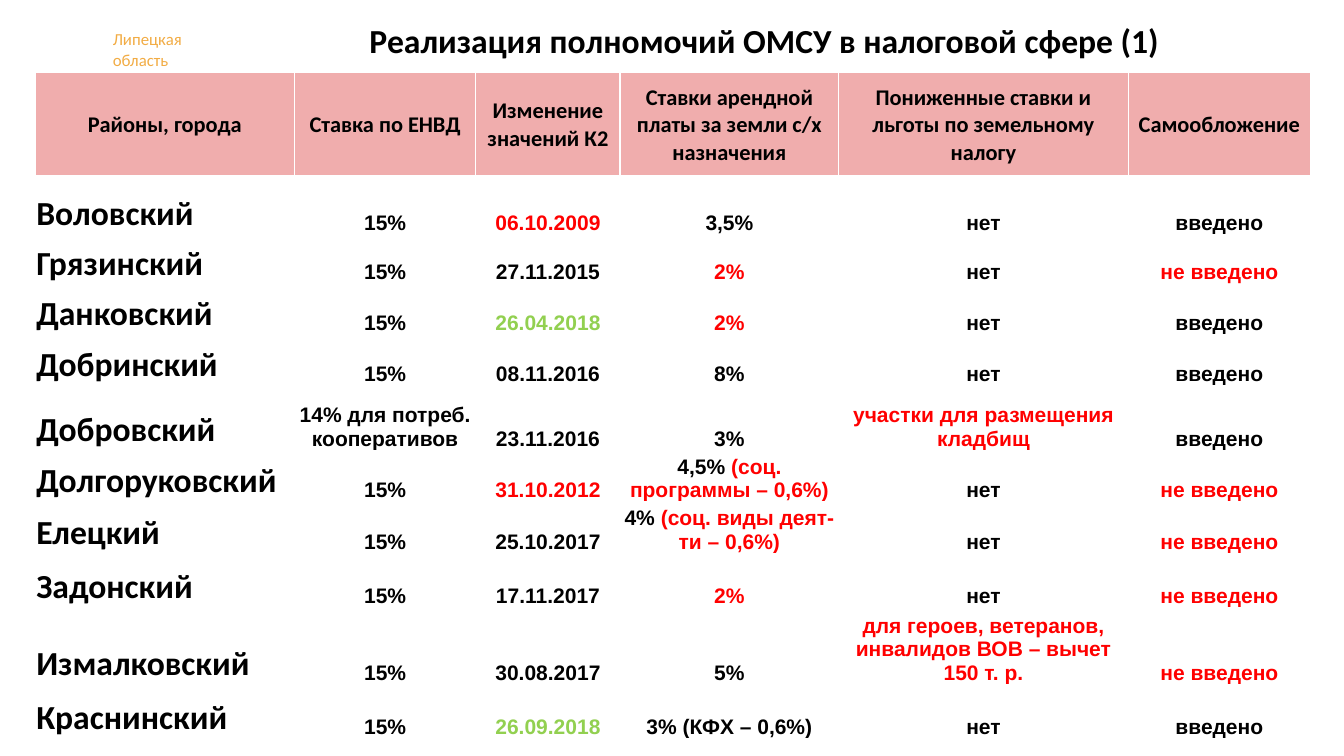
from lxml.etree import SubElement
from pptx import Presentation
from pptx.dml.color import RGBColor
from pptx.enum.text import MSO_ANCHOR as Anchor, MSO_AUTO_SIZE as AutoSize, PP_ALIGN as Align
from pptx.oxml.ns import qn
from pptx.util import Inches, Pt

COLORS = {"black": "000000", "red": "FF0000", "green": "92D050",
          "header": "F0ADAD", "border": "FFFFFF", "region": "F2AC44"}

COLUMN_WIDTHS = [2.57, 1.8, 1.43, 2.17, 2.87, 1.81]
ROW_HEIGHTS = [1.03, 0.58, 0.49, 0.5, 0.51, 0.64, 0.51, 0.51, 0.54, 0.76, 0.54]
TABLE_LEFT, TABLE_TOP = 0.35, 0.72


def red(text):
    return text, "red"


def green(text):
    return text, "green"


NO_TAX = red("не введено")
HEADERS = ["Районы, города", "Ставка по ЕНВД", "Изменение значений К2",
           "Ставки арендной платы за земли с/х назначения",
           "Пониженные ставки и льготы по земельному налогу", "Самообложение"]
DISTRICTS = [
    ["Воловский", "15%", red("06.10.2009"), "3,5%", "нет", "введено"],
    ["Грязинский", "15%", "27.11.2015", red("2%"), "нет", NO_TAX],
    ["Данковский", "15%", green("26.04.2018"), red("2%"), "нет", "введено"],
    ["Добринский", "15%", "08.11.2016", "8%", "нет", "введено"],
    ["Добровский", "14% для потреб. кооперативов", "23.11.2016", "3%",
     red("участки для размещения кладбищ"), "введено"],
    ["Долгоруковский", "15%", red("31.10.2012"),
     ["4,5% ", red("(соц. программы – 0,6%)")], "нет", NO_TAX],
    ["Елецкий", "15%", "25.10.2017",
     ["4% ", red("(соц. виды деят-ти – 0,6%)")], "нет", NO_TAX],
    ["Задонский", "15%", "17.11.2017", red("2%"), "нет", NO_TAX],
    ["Измалковский", "15%", "30.08.2017", "5%",
     red("для героев, ветеранов, инвалидов ВОВ – вычет 150 т. р."), NO_TAX],
    ["Краснинский", "15%", green("26.09.2018"), "3% (КФХ – 0,6%)", "нет", "введено"],
]


def rgb(name):
    return RGBColor.from_string(COLORS[name])


def style_font(font, size, name="Calibri", bold=True):
    font.size, font.name, font.bold = Pt(size), name, bold


def write_runs(paragraph, content):
    """Content is a string, a (text, colour) pair or a list of these."""
    for part in content if isinstance(content, list) else [content]:
        text, color = part if isinstance(part, tuple) else (part, "black")
        run = paragraph.add_run()
        run.text = text
        run.font.color.rgb = rgb(color)


def set_borders(cell, bottom_width):
    properties = cell._tc.get_or_add_tcPr()
    for side, width in (("L", 1), ("R", 1), ("T", 1), ("B", bottom_width)):
        line = SubElement(properties, qn(f"a:ln{side}"), w=str(Pt(width)))
        fill = SubElement(line, qn("a:solidFill"))
        SubElement(fill, qn("a:srgbClr"), val=COLORS["border"])


def fill_cell(cell, content, row, column):
    is_header = row == 0
    set_borders(cell, 3 if is_header else 1)
    if is_header:
        cell.fill.solid()
        cell.fill.fore_color.rgb = rgb("header")
    else:
        cell.fill.background()
    cell.margin_left = cell.margin_right = cell.margin_top = Inches(0.01)
    cell.margin_bottom = 0
    cell.vertical_anchor = Anchor.MIDDLE if is_header else Anchor.BOTTOM
    paragraph = cell.text_frame.paragraphs[0]
    paragraph.alignment = Align.CENTER if is_header or column else Align.LEFT
    if is_header:
        style_font(paragraph.font, 16)
    elif column == 0:
        style_font(paragraph.font, 24)
    else:
        style_font(paragraph.font, 15, "Arial")
    write_runs(paragraph, content)
    for run in paragraph.runs:
        run.font.size, run.font.name = paragraph.font.size, paragraph.font.name
        run.font.bold = True


def add_district_table(slide):
    rows = [HEADERS] + DISTRICTS
    table = slide.shapes.add_table(
        len(rows), len(HEADERS), Inches(TABLE_LEFT), Inches(TABLE_TOP),
        Inches(sum(COLUMN_WIDTHS)), Inches(sum(ROW_HEIGHTS))).table
    table.horz_banding = False
    for column, width in zip(table.columns, COLUMN_WIDTHS):
        column.width = Inches(width)
    for row, height in zip(table.rows, ROW_HEIGHTS):
        row.height = Inches(height)
    for row, contents in enumerate(rows):
        for column, content in enumerate(contents):
            fill_cell(table.cell(row, column), content, row, column)


def add_region_label(slide):
    box = slide.shapes.add_textbox(Inches(1.02), Inches(0.24), Inches(0.91), Inches(0.5))
    box.text_frame.text = "Липецкая\nобласть"
    for paragraph in box.text_frame.paragraphs:
        style_font(paragraph.font, 12, bold=False)
        paragraph.font.color.rgb = rgb("region")


def format_title(title):
    title.left, title.top = Inches(2.1), Inches(0.13)
    title.width, title.height = Inches(10.96), Inches(0.58)
    frame = title.text_frame
    frame.text = "Реализация полномочий ОМСУ в налоговой сфере (1)"
    frame.auto_size = AutoSize.NONE
    frame.vertical_anchor = Anchor.MIDDLE
    paragraph = frame.paragraphs[0]
    paragraph.alignment = Align.CENTER
    paragraph.line_spacing = 0.9
    style_font(paragraph.font, 24)
    paragraph.font.color.rgb = rgb("black")


def main():
    presentation = Presentation()
    presentation.slide_width, presentation.slide_height = Inches(13.33), Inches(7.5)
    slide = presentation.slides.add_slide(presentation.slide_layouts[5])
    add_region_label(slide)
    add_district_table(slide)
    format_title(slide.shapes.title)
    presentation.save("out.pptx")


if __name__ == "__main__":
    main()
